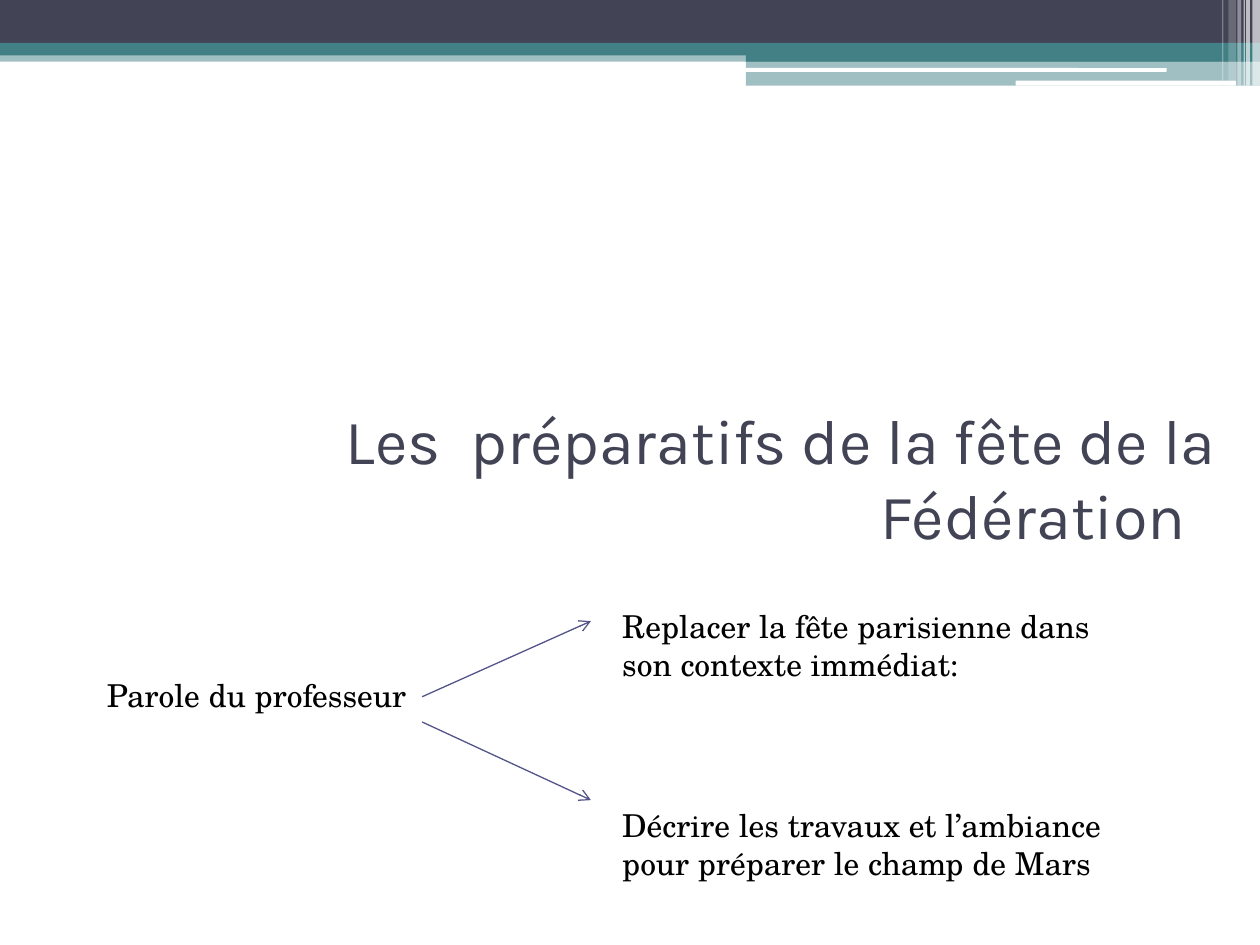
from lxml.etree import SubElement
from pptx import Presentation
from pptx.dml.color import RGBColor
from pptx.enum.shapes import MSO_CONNECTOR, MSO_SHAPE
from pptx.enum.text import MSO_ANCHOR, PP_ALIGN
from pptx.oxml.ns import qn
from pptx.util import Inches, Pt

NAVY = RGBColor(0x42, 0x44, 0x56)
TEAL = RGBColor(0x43, 0x80, 0x86)
INDIGO = RGBColor(0x53, 0x54, 0x8A)
WHITE = RGBColor(0xFF, 0xFF, 0xFF)
BLACK = RGBColor(0x00, 0x00, 0x00)

TITLE_FONT = "Karla"
BODY_FONT = "TeX Gyre Schola"


def add_band(page, left, top, width, height, color, opacity=100,
             preset=MSO_SHAPE.RECTANGLE):
    band = page.shapes.add_shape(preset, Inches(left), Inches(top),
                                 Inches(width), Inches(height))
    band.shadow.inherit = False
    band.fill.solid()
    band.fill.fore_color.rgb = color
    band.line.fill.background()
    if opacity < 100:
        color_node = band.fill._xPr.find(qn("a:solidFill"))[0]
        SubElement(color_node, qn("a:alpha"), val=str(opacity * 1000))
    return band


def add_text(page, left, top, width, height, text, font, size, color,
             align=PP_ALIGN.LEFT, anchor=MSO_ANCHOR.TOP):
    box = page.shapes.add_textbox(Inches(left), Inches(top),
                                  Inches(width), Inches(height))
    frame = box.text_frame
    frame.word_wrap = True
    frame.vertical_anchor = anchor
    frame.text = text
    para = frame.paragraphs[0]
    para.alignment = align
    for span in para.runs:
        span.font.name = font
        span.font.size = Pt(size)
        span.font.color.rgb = color


def add_arrow(page, start_x, start_y, end_x, end_y):
    arrow = page.shapes.add_connector(
        MSO_CONNECTOR.STRAIGHT, Inches(start_x), Inches(start_y),
        Inches(end_x), Inches(end_y))
    arrow.line.color.rgb = INDIGO
    arrow.line.width = Pt(0.75)
    SubElement(arrow.line._get_or_add_ln(), qn("a:tailEnd"), type="arrow")
    SubElement(arrow._element.spPr, qn("a:effectLst"))


def draw_header(page, width):
    # Full-width bands, then the deeper step on the right
    step_left = 5.92
    step_width = width - step_left
    add_band(page, 0, 0.4, width, 0.09, TEAL, 50)
    add_band(page, 0, 0, width, 0.34, NAVY)
    add_band(page, 0, 0.34, width, 0.1, TEAL)
    add_band(page, step_left, 0.39, step_width, 0.1, TEAL)
    add_band(page, step_left, 0.48, step_width, 0.2, TEAL, 50)

    # White rounded rules
    for left, top, rule_width, height in ((5.91, 0.54, 3.35, 0.03),
                                          (8.06, 0.64, 1.75, 0.04)):
        rule = add_band(page, left, top, rule_width, height, WHITE,
                        preset=MSO_SHAPE.ROUNDED_RECTANGLE)
        rule.adjustments[0] = 0.167

    # Translucent stripes at the right edge: left, width, height, opacity
    for left, stripe_width, height, opacity in (
            (9.94, 0.06, 0.68, 65), (9.89, 0.03, 0.68, 65),
            (9.87, 0.01, 0.68, 60), (9.82, 0.03, 0.68, 40),
            (9.75, 0.06, 0.64, 20), (9.7, 0.01, 0.64, 30)):
        add_band(page, left, 0, stripe_width, height, WHITE, opacity)


def draw_title(page, left, top, width, height):
    add_text(page, left, top, width, height,
             "Les  préparatifs de la fête de la Fédération  ",
             TITLE_FONT, 36, NAVY, PP_ALIGN.RIGHT, MSO_ANCHOR.MIDDLE)


def draw_branches(page, left, top):
    # Source label, with an arrow to each of its two aims
    add_text(page, left, top + 0.55, 2.83, 0.4, "Parole du professeur",
             BODY_FONT, 18, BLACK)
    branches = (
        (0, 0.76, 0.16, "Replacer la fête parisienne dans son contexte immédiat:"),
        (1.58, 0.96, 1.58,
         "Décrire les travaux et l’ambiance  pour préparer le champ de Mars"),
    )
    for text_y, start_y, end_y, text in branches:
        add_arrow(page, left + 2.6, top + start_y, left + 3.94, top + end_y)
        add_text(page, left + 4.09, top + text_y, 4.17, 0.71, text,
                 BODY_FONT, 18, BLACK)


def main():
    deck = Presentation()
    deck.slide_width = Inches(10)
    deck.slide_height = Inches(7.5)
    page = deck.slides.add_slide(deck.slide_layouts[6])
    draw_header(page, 10)
    draw_title(page, 0.75, 3.2, 9, 1.17)
    draw_branches(page, 0.75, 4.77)
    deck.save("out.pptx")


if __name__ == "__main__":
    main()
